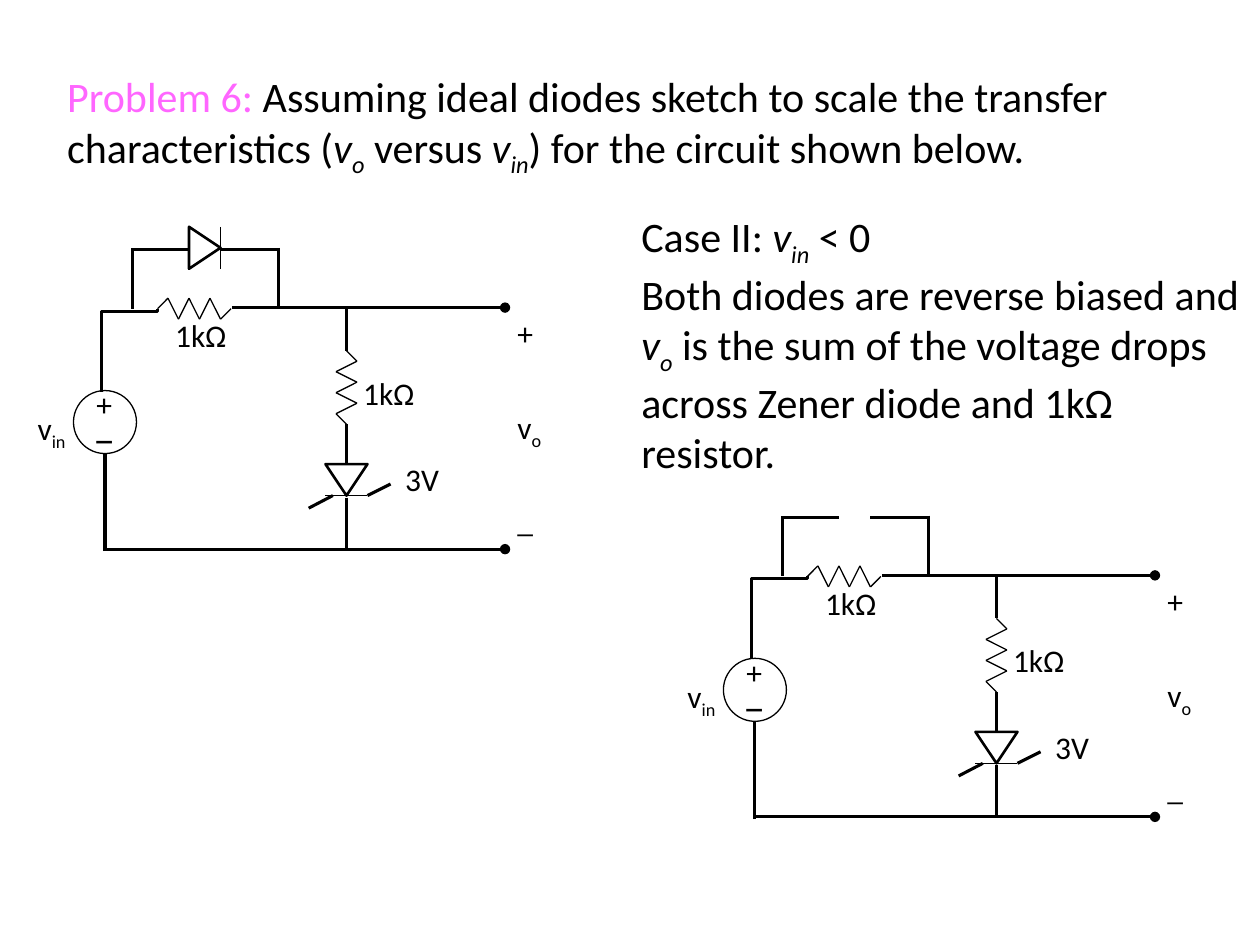
import dataclasses

import pptx
import pptx.dml.color
import pptx.enum.shapes
import pptx.enum.text
import pptx.oxml.ns
import pptx.oxml.xmlchemy
import pptx.util

SHAPE = pptx.enum.shapes.MSO_SHAPE
CONNECTOR = pptx.enum.shapes.MSO_CONNECTOR
TEXT = pptx.enum.text
CELL = pptx.util.Inches(1) / 12  # the slide is a grid of 120 columns by 90 rows


@dataclasses.dataclass(frozen=True)
class Theme:
    font: str = "Calibri"
    ink: str = "000000"
    accent: str = "FF66FF"
    prose: float = 24
    label: float = 18
    thin: float = 0.75
    outline: float = 1.5
    wire: float = 1.75


THEME = Theme()
PLAIN, ITALIC = {}, {"italic": True}
SUB, ITALIC_SUB = {"baseline": -25000}, {"italic": True, "baseline": -25000}
V_IN = [("v", PLAIN), ("in", SUB)]
V_OUT = [("v", PLAIN), ("o", SUB)]
V_IN_ITALIC = [("v", ITALIC), ("in", ITALIC_SUB)]
V_OUT_ITALIC = [("v", ITALIC), ("o", ITALIC_SUB)]

PROBLEM = [[("Problem 6: ", {"color": THEME.accent}),
            ("Assuming ideal diodes sketch to scale the transfer characteristics (", PLAIN),
            *V_OUT_ITALIC, (" versus ", PLAIN), *V_IN_ITALIC,
            (") for the circuit shown below.", PLAIN)]]
CASE = [[("Case II: ", PLAIN), *V_IN_ITALIC, (" < 0", PLAIN)],
        [("Both diodes are reverse biased and ", PLAIN), *V_OUT_ITALIC,
         (" is the sum of the voltage drops across Zener diode and 1kΩ resistor.", PLAIN)]]
RESISTANCE = [[("1kΩ", PLAIN)]]


def cells(*lengths):
    return [pptx.util.Emu(round(length * CELL)) for length in lengths]


def set_all(target, values):
    for name, value in values.items():
        setattr(target, name, value)


def rgb(color):
    return pptx.dml.color.RGBColor.from_string(color)


def new_element(tag, **attributes):
    element = pptx.oxml.xmlchemy.OxmlElement(tag)
    for name, value in attributes.items():
        element.set(name, value)
    return element


def write(frame, paragraphs, size, frame_format, paragraph_format):
    """Fill a text frame with paragraphs, each a list of (words, style) runs."""
    set_all(frame, frame_format)
    for index, runs in enumerate(paragraphs):
        paragraph = frame.paragraphs[0] if index == 0 else frame.add_paragraph()
        set_all(paragraph, {"alignment": TEXT.PP_ALIGN.LEFT, **paragraph_format})
        if index == 0:
            paragraph.space_before = pptx.util.Pt(0)
        for words, style in runs:
            run = paragraph.add_run()
            run.text = words
            set_all(run.font, {"name": THEME.font, "size": pptx.util.Pt(size),
                               "bold": style.get("bold", False),
                               "italic": style.get("italic", False)})
            run.font.color.rgb = rgb(style.get("color", THEME.ink))
            if "baseline" in style:
                run._r.get_or_add_rPr().set("baseline", str(style["baseline"]))


def write_prose(shape, box, paragraphs):
    set_all(shape, dict(zip(("left", "top", "width", "height"), cells(*box))))
    write(shape.text_frame, paragraphs, THEME.prose,
          {"word_wrap": True, "auto_size": TEXT.MSO_AUTO_SIZE.NONE,
           "vertical_anchor": TEXT.MSO_ANCHOR.BOTTOM},
          {"space_before": pptx.util.Pt(0)})


def set_line(shape, weight):
    shape.line.color.rgb = rgb(THEME.ink)
    shape.line.width = pptx.util.Pt(weight)


class Schematic:
    """Draws grouped circuit symbols in cells, measured from one corner."""

    def __init__(self, slide, left, top):
        self.symbols = slide.shapes.add_group_shape().shapes
        self.left, self.top = left, top

    def at(self, x, y):
        return self.left + x, self.top + y

    def wire(self, start, end, weight=THEME.wire, kind=CONNECTOR.STRAIGHT, terminal=False):
        wire = self.symbols.add_connector(kind, *cells(*self.at(*start), *self.at(*end)))
        set_line(wire, weight)
        properties = wire._element.spPr
        if terminal:
            properties.find(pptx.oxml.ns.qn("a:ln")).append(
                new_element("a:tailEnd", type="oval"))
        properties.append(new_element("a:effectLst"))
        return wire

    def corner_wire(self, box, bend):
        """Wire that rises from the box's lower left and turns right near the top."""
        x, y, width, height = box
        # The stored frame is the box turned a quarter about its centre.
        left, top = x + (width - height) / 2, y + (height - width) / 2
        wire = self.wire((left + height, top + width), (left, top), kind=CONNECTOR.ELBOW)
        properties = wire._element.spPr
        properties.find(pptx.oxml.ns.qn("a:xfrm")).set("rot", "5400000")
        geometry = properties.find(pptx.oxml.ns.qn("a:prstGeom"))
        geometry.find(pptx.oxml.ns.qn("a:avLst")).append(
            new_element("a:gd", name="adj1", fmla=f"val {round(bend * 100000)}"))

    def outline(self, kind, box, weight, rotation=0):
        shape = self.symbols.add_shape(kind, *cells(*self.at(*box[:2]), *box[2:]))
        shape.shadow.inherit = False
        shape.fill.background()
        shape.rotation = rotation
        set_line(shape, weight)

    def resistor(self, x, y, vertical=False):
        swings = (0, 1, -1, 1, -1, 1, -1, 0)
        points = [(x + swing, y + step) if vertical else (x + step, y - swing)
                  for step, swing in enumerate(swings)]
        for start, end in zip(points, points[1:]):
            self.wire(start, end, THEME.thin)

    def label(self, box, paragraphs, wrap=False, **paragraph_format):
        label = self.symbols.add_textbox(*cells(*self.at(*box[:2]), *box[2:]))
        write(label.text_frame, paragraphs, THEME.label,
              {"word_wrap": wrap, "auto_size": TEXT.MSO_AUTO_SIZE.SHAPE_TO_FIT_TEXT},
              paragraph_format)


def draw_source(circuit):
    circuit.label((2.4, 17, 5.5, 4.8), [V_IN])
    circuit.outline(SHAPE.OVAL, (7, 15.8, 6, 6), THEME.thin)
    circuit.label((8, 16, 3.3, 5.8), [[("+", PLAIN)], [("_", {"bold": True})]],
                  wrap=True, line_spacing=0.6)
    circuit.corner_wire((9.7, 8, 5.3, 7.9), 0.97)
    circuit.wire((10, 31.1), (10, 21.8))


def draw_bypass(circuit, with_diode):
    """Upper branch around the series resistor, open where the diode is off."""
    circuit.resistor(15, 8)
    circuit.label((15.5, 8.1, 7.9, 4.8), RESISTANCE)
    for start, end in (((21, 2.4), (26.5, 2.4)), ((12.5, 2.4), (18, 2.4)),
                       ((26.5, 2.2), (26.5, 7.8)), ((12.6, 2.4), (12.6, 8))):
        circuit.wire(start, end)
    if with_diode:
        circuit.outline(SHAPE.ISOSCELES_TRIANGLE, (17.5, 0.7, 4, 3), THEME.outline, 90)
        circuit.wire((21, 0.2), (21, 4.2), THEME.thin)


def draw_zener_branch(circuit):
    circuit.resistor(33, 12, vertical=True)
    circuit.label((33.4, 13.6, 7.9, 4.8), RESISTANCE)
    for top, bottom in ((8, 12), (19, 22.8), (26, 30.9)):
        circuit.wire((33, top), (33, bottom))
    circuit.outline(SHAPE.ISOSCELES_TRIANGLE, (31, 22.8, 4, 3), THEME.outline, 180)
    circuit.wire((35, 25.8), (31, 25.8), THEME.thin)
    circuit.wire((35, 25.8), (37.2, 24.7))
    circuit.wire((29.4, 27), (31.7, 25.8))
    circuit.label((37.4, 21.8, 6.1, 4.8), [[("3V", PLAIN)]])


def draw_output(circuit):
    circuit.wire((22.1, 7.9), (48.1, 7.9), terminal=True)
    circuit.wire((10, 30.9), (48.1, 30.9), terminal=True)
    circuit.label((48.1, 9.2, 6.7, 20.9), [[("+", PLAIN)], V_OUT, [("_", PLAIN)]],
                  wrap=True, line_spacing=0.6, space_before=pptx.util.Pt(39.5))


def draw_circuit(slide, left, top, with_diode):
    circuit = Schematic(slide, left, top)
    draw_source(circuit)
    draw_bypass(circuit, with_diode)
    draw_zener_branch(circuit)
    draw_output(circuit)


def main():
    deck = pptx.Presentation()
    deck.slide_width, deck.slide_height = cells(120, 90)
    slide = deck.slides.add_slide(deck.slide_layouts[5])
    write_prose(slide.shapes.title, (5.2, 3, 108.7, 14.6), PROBLEM)
    write_prose(slide.shapes.add_textbox(0, 0, 0, 0), (59.9, 21.6, 59.8, 24.4), CASE)
    draw_circuit(slide, 0, 21.4, with_diode=True)
    draw_circuit(slide, 61.9, 46.9, with_diode=False)
    deck.save("out.pptx")


if __name__ == "__main__":
    main()
